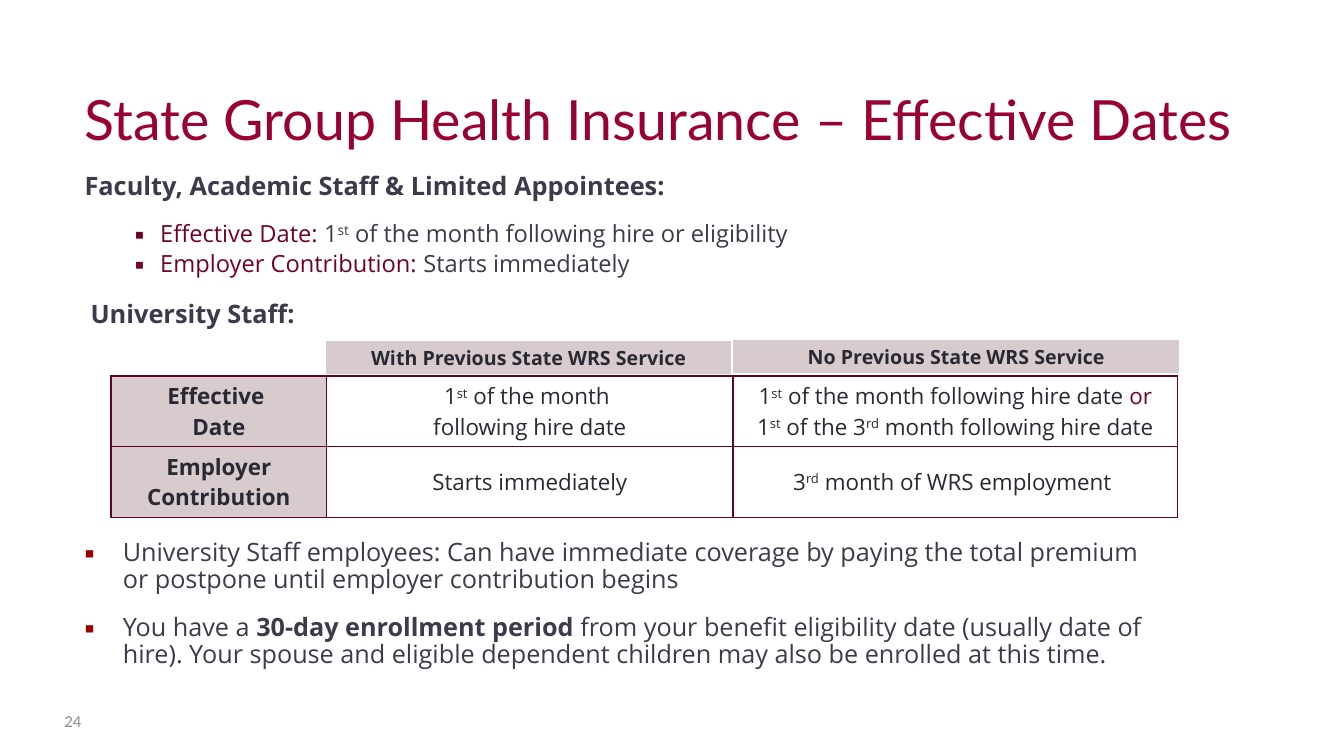
from lxml import etree
from pptx import Presentation
from pptx.dml.color import RGBColor
from pptx.enum.shapes import MSO_SHAPE
from pptx.enum.text import MSO_ANCHOR, MSO_AUTO_SIZE, PP_ALIGN
from pptx.oxml import parse_xml
from pptx.oxml.ns import nsdecls, qn
from pptx.util import Inches, Pt

CENTER = PP_ALIGN.CENTER
MIDDLE, BOTTOM, TOP = MSO_ANCHOR.MIDDLE, MSO_ANCHOR.BOTTOM, MSO_ANCHOR.TOP
FIT_SHAPE = MSO_AUTO_SIZE.SHAPE_TO_FIT_TEXT
RECTANGLE = MSO_SHAPE.RECTANGLE

TITLE, SLATE, INK, WINE = "990033", "3B3B4B", "292934", "730026"
BULLET, BORDER, PANEL, WHITE, GRAY = "960000", "68001F", "D8CBCD", "FFFFFF", "8E8E90"
BODY_FONT = "Open Sans"
rgb = RGBColor.from_string


def write(p, runs, size, font=BODY_FONT):
    for text, color, bold in runs:
        for i, part in enumerate(text.split("^")):
            if not part:
                continue
            r = p.add_run()
            r.text = part
            r.font.size = Pt(size)
            r.font.name = font
            r.font.bold = bold
            r.font.color.rgb = rgb(color)
            if i % 2:
                r._r.get_or_add_rPr().set("baseline", "30000")


def add_bullet(p, left, hang, color):
    pPr = p._p.get_or_add_pPr()
    pPr.set("marL", str(Inches(left)))
    pPr.set("indent", str(-Inches(hang)))
    clr = etree.SubElement(pPr, qn("a:buClr"))
    etree.SubElement(clr, qn("a:srgbClr")).set("val", color)
    etree.SubElement(pPr, qn("a:buFont")).set("typeface", BODY_FONT)
    etree.SubElement(pPr, qn("a:buChar")).set("char", "▪")


prs = Presentation()
prs.slide_width, prs.slide_height = Inches(13.33), Inches(7.5)
s = prs.slides.add_slide(prs.slide_layouts[6])

frames = []
for x, y, w, h, anchor in [
    (0.74, 0.3, 11.94, 1.25, BOTTOM),
    (0.54, 6.95, 0.56, 0.4, MIDDLE),
    (0.74, 1.68, 12.26, 1.8, TOP),
    (0.74, 5.31, 10.83, 1.08, TOP),
]:
    tf = s.shapes.add_textbox(Inches(x), Inches(y), Inches(w), Inches(h)).text_frame
    tf.word_wrap = True
    tf.vertical_anchor = anchor
    frames.append(tf)
title, number, faculty, notes = frames

write(title.paragraphs[0],
      [("State Group Health Insurance – Effective Dates", TITLE, False)], 39.6, "Lato")
write(number.paragraphs[0], [("24", GRAY, False)], 12, "Calibri")

p = faculty.paragraphs[0]
p.line_spacing = 0.88
p.space_after = Pt(12)
write(p, [("Faculty, Academic Staff & Limited Appointees:", SLATE, True)], 18.1)
for label, value in [
    ("Effective Date: ", "1^st^ of the month following hire or eligibility"),
    ("Employer Contribution: ", "Starts immediately"),
]:
    p = faculty.add_paragraph()
    add_bullet(p, 0.75, 0.25, WINE)
    p.line_spacing = 0.88
    p.space_before = Pt(3.4)
    write(p, [(label, WINE, False), (value, SLATE, False)], 16.9)
p = faculty.add_paragraph()
p._p.get_or_add_pPr().set("marL", str(Inches(0.06)))
p.line_spacing = 0.88
p.space_before = Pt(18)
write(p, [("University Staff:", SLATE, True)], 18.1)

for i, runs in enumerate([
    [("University Staff employees: Can have immediate coverage by paying the total "
      "premium or postpone until employer contribution begins", SLATE, False)],
    [("You have a ", SLATE, False),
     ("30-day enrollment period ", SLATE, True),
     ("from your benefit eligibility date (usually date of hire). Your spouse and "
      "eligible dependent children may also be enrolled at this time.", SLATE, False)],
]):
    p = notes.add_paragraph() if i else notes.paragraphs[0]
    add_bullet(p, 0.38, 0.38, BULLET)
    p.line_spacing = 0.88
    p.space_before = Pt(3.6 if i else 0)
    p.space_after = Pt(12)
    write(p, runs, 18)

rows = [
    [
        [[("Effective ", INK, True)], [("Date", INK, True)]],
        [[("1^st^ of the month ", INK, False)], [("following hire date", INK, False)]],
        [[("1^st^ of the month following hire date ", INK, False), ("or", WINE, False)],
         [("1^st^ of the 3^rd^ month following hire date", INK, False)]],
    ],
    [
        [[("Employer Contribution", INK, True)]],
        [[("Starts immediately", INK, False)]],
        [[("3^rd^ month of WRS employment ", INK, False)]],
    ],
]
table = s.shapes.add_table(2, 3, Inches(1.1), Inches(3.73),
                           Inches(10.58), Inches(1.4)).table
table.first_row = False
table.horz_banding = False
for column, width in zip(table.columns, [2.14, 4.03, 4.41]):
    column.width = Inches(width)
for i, row in enumerate(rows):
    for j, lines in enumerate(row):
        cell = table.cell(i, j)
        cell.vertical_anchor = MIDDLE
        tcPr = cell._tc.get_or_add_tcPr()
        for side in "LRTB":
            tcPr.append(parse_xml(
                f'<a:ln{side} {nsdecls("a")} w="{Pt(1)}"><a:solidFill>'
                f'<a:srgbClr val="{BORDER}"/></a:solidFill></a:ln{side}>'))
        cell.fill.solid()
        cell.fill.fore_color.rgb = rgb(WHITE if j else PANEL)
        for k, runs in enumerate(lines):
            p = cell.text_frame.add_paragraph() if k else cell.text_frame.paragraphs[0]
            p.alignment = CENTER
            write(p, runs, 16)

for x, y, w, heading in [
    (3.23, 3.38, 4.03, "With Previous State WRS Service"),
    (7.27, 3.37, 4.43, "No Previous State WRS Service"),
]:
    sp = s.shapes.add_shape(RECTANGLE, Inches(x), Inches(y), Inches(w), Inches(0.34))
    sp.shadow.inherit = False
    sp.fill.solid()
    sp.fill.fore_color.rgb = rgb(PANEL)
    sp.line.color.rgb = rgb(WHITE)
    sp.line.width = Pt(0.75)
    tf = sp.text_frame
    tf.word_wrap = True
    tf.auto_size = FIT_SHAPE
    tf.vertical_anchor = TOP
    p = tf.paragraphs[0]
    p.alignment = CENTER
    write(p, [(heading, INK, True)], 14)

prs.save("out.pptx")
